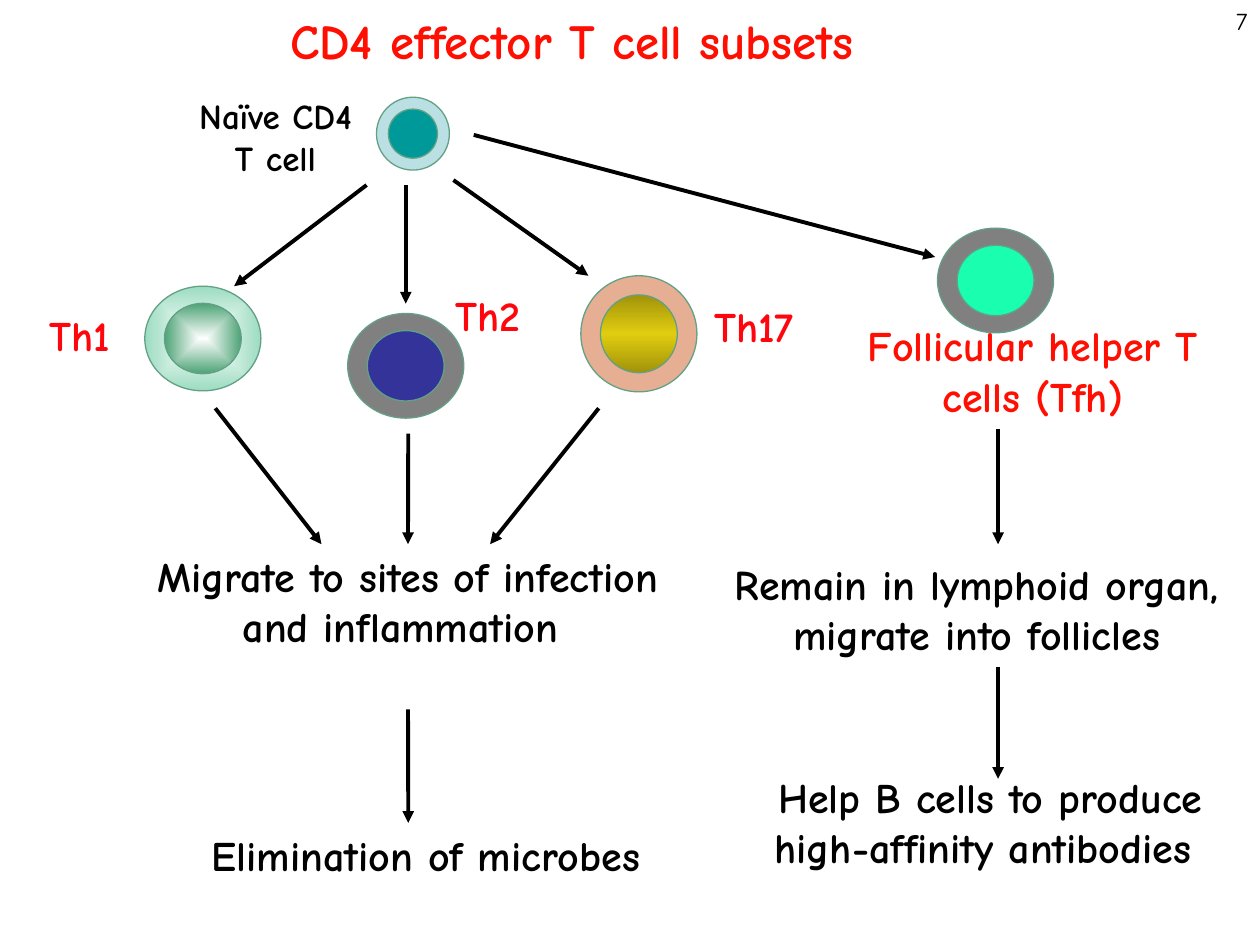
from dataclasses import dataclass
from typing import Optional, Union

from pptx import Presentation
from pptx.dml.color import RGBColor
from pptx.enum.shapes import MSO_CONNECTOR as Connector, MSO_SHAPE as Preset
from pptx.enum.text import MSO_ANCHOR as Anchor, MSO_AUTO_SIZE as AutoSize, PP_ALIGN as Align
from pptx.oxml import parse_xml
from pptx.oxml.ns import nsdecls, qn
from pptx.util import Cm, Pt


@dataclass(frozen=True)
class Theme:
    font: str = "Comic Neue"
    black: str = "000000"
    label_red: str = "FF060F"
    title_red: str = "FF0E02"
    outline: str = "63A186"
    grey: str = "808080"
    title_size: float = 28
    body_size: float = 24
    small_size: float = 20
    number_size: float = 14
    arrow_width: float = 2.25
    outline_width: float = 0.75


@dataclass(frozen=True)
class Gradient:
    stops: tuple
    radial: bool


@dataclass(frozen=True)
class Cell:
    left: float
    top: float
    width: float
    height: float
    inner_width: float
    inner_height: float
    outer_fill: Union[str, Gradient]
    inner_fill: Union[str, Gradient]


@dataclass(frozen=True)
class Label:
    lines: tuple
    left: float
    top: float
    width: float
    height: float
    color: str
    size: float = 24
    align: Align = Align.CENTER
    wrap: bool = True
    bold: bool = True


@dataclass(frozen=True)
class Arrow:
    start: tuple
    end: tuple
    start_label: Optional[str] = None
    end_label: Optional[str] = None


THEME = Theme()

TITLE = Label(("CD4 effector T cell subsets ",), 4.6, 0.08, 14.2, 1.45,
              THEME.title_red, THEME.title_size, wrap=False)

CELLS = (
    Cell(2.92, 5.77, 2.34, 2.11, 1.55, 1.42,
         Gradient(((0, "FFFFFF"), (100, "9CDCC1")), True),
         Gradient(((0, "FFFFFF"), (100, "4DA376")), True)),
    Cell(11.71, 5.56, 2.34, 2.34, 1.55, 1.57, "E6AE92",
         Gradient(((0, "A1930B"), (50, "E1CD0F"), (100, "A1930B")), False)),
    Cell(7.59, 1.96, 1.47, 1.47, 0.99, 0.99, "BBE0E3", "009999"),
    Cell(7.01, 6.32, 2.34, 2.11, 1.55, 1.42, THEME.grey, "333399"),
    Cell(18.9, 4.6, 2.34, 2.11, 1.55, 1.42, THEME.grey, "19FFAF"),
)

LABELS = {
    "number": Label(("7",), 22.71, 0, 2.69, 0.89, THEME.black, THEME.number_size,
                    Align.RIGHT, bold=False),
    "th1": Label(("Th1",), 0.74, 6.12, 2.11, 1.27, THEME.label_red,
                 align=Align.LEFT, wrap=False),
    "th17": Label(("Th17",), 14.15, 5.94, 2.64, 1.27, THEME.label_red,
                  align=Align.LEFT, wrap=False),
    "th2": Label(("Th2",), 8.94, 5.72, 2.13, 1.27, THEME.label_red,
                 align=Align.LEFT, wrap=False),
    "naive": Label(("Naïve CD4", "T cell"), 3.51, 1.78, 4.09, 1.96, THEME.black,
                   THEME.small_size, wrap=False),
    "follicular": Label(("Follicular helper T cells (Tfh)",), 17.2, 6.32, 7.24, 2.31,
                        THEME.title_red),
    "migrate": Label(("Migrate to sites of infection and inflammation ",),
                     2.84, 10.97, 10.77, 3.33, THEME.black),
    "remain": Label(("Remain in lymphoid organ, migrate into follicles",),
                    13.97, 11.13, 11.43, 2.31, THEME.black),
    "help": Label(("Help B cells to produce high-affinity antibodies ",),
                  14.53, 15.42, 10.87, 2.31, THEME.black),
    "eliminate": Label(("Elimination of microbes",), 3.2, 16.59, 10.77, 1.27, THEME.black),
}

ARROWS = (
    Arrow((7.39, 3.73), (4.72, 5.77)),
    Arrow((8.18, 3.73), (8.18, 6.12)),
    Arrow((9.14, 3.63), (11.86, 5.56)),
    Arrow((9.55, 2.72), (18.85, 5.18)),
    Arrow((4.34, 8.23), (6.48, 10.97)),
    Arrow((8.23, 8.74), (8.23, 10.97), end_label="migrate"),
    Arrow((12.07, 8.23), (9.88, 10.97)),
    Arrow((20.12, 8.64), (20.12, 10.97)),
    Arrow((8.23, 14.3), (8.23, 16.59), start_label="migrate"),
    Arrow((20.12, 13.44), (20.12, 15.7)),
)


def apply_fill(shape, fill: Union[str, Gradient]) -> None:
    if isinstance(fill, str):
        shape.fill.solid()
        shape.fill.fore_color.rgb = RGBColor.from_string(fill)
        return
    stops = "".join(f'<a:gs pos="{position * 1000}"><a:srgbClr val="{color}"/></a:gs>'
                    for position, color in fill.stops)
    direction = ('<a:path path="shape"><a:fillToRect l="50000" t="50000" r="50000" b="50000"/></a:path>'
                 if fill.radial else '<a:lin ang="5400000" scaled="1"/>')
    shape.fill.background()
    properties = shape.element.spPr
    properties.replace(properties.find(qn("a:noFill")), parse_xml(
        f'<a:gradFill {nsdecls("a")} rotWithShape="1"><a:gsLst>{stops}</a:gsLst>{direction}</a:gradFill>'))


def draw_cell(slide, cell: Cell) -> None:
    group = slide.shapes.add_group_shape()
    for width, height, fill in ((cell.width, cell.height, cell.outer_fill),
                                (cell.inner_width, cell.inner_height, cell.inner_fill)):
        left = cell.left + (cell.width - width) / 2
        top = cell.top + (cell.height - height) / 2
        shape = group.shapes.add_shape(Preset.OVAL, Cm(left), Cm(top), Cm(width), Cm(height))
        shape.shadow.inherit = False
        apply_fill(shape, fill)
        shape.line.color.rgb = RGBColor.from_string(THEME.outline)
        shape.line.width = Pt(THEME.outline_width)


def write_label(shape, label: Label) -> None:
    shape.left, shape.top = Cm(label.left), Cm(label.top)
    shape.width, shape.height = Cm(label.width), Cm(label.height)
    frame = shape.text_frame
    frame.word_wrap = label.wrap
    frame.auto_size = AutoSize.NONE if label.wrap else AutoSize.SHAPE_TO_FIT_TEXT
    frame.vertical_anchor = Anchor.TOP
    for index, line in enumerate(label.lines):
        paragraph = frame.add_paragraph() if index else frame.paragraphs[0]
        paragraph.alignment = label.align
        run = paragraph.add_run()
        run.text = line
        run.font.name = THEME.font
        run.font.size = Pt(label.size)
        run.font.bold = label.bold
        run.font.color.rgb = RGBColor.from_string(label.color)


def draw_arrow(slide, arrow: Arrow, boxes: dict) -> None:
    ends = [Cm(value) for value in arrow.start + arrow.end]
    connector = slide.shapes.add_connector(Connector.STRAIGHT, *ends)
    if arrow.start_label:
        connector.begin_connect(boxes[arrow.start_label], 2)
    if arrow.end_label:
        connector.end_connect(boxes[arrow.end_label], 0)
    connector.line.color.rgb = RGBColor.from_string(THEME.black)
    connector.line.width = Pt(THEME.arrow_width)
    properties = connector.element.spPr
    properties.find(qn("a:ln")).append(parse_xml(f'<a:tailEnd {nsdecls("a")} type="triangle"/>'))
    properties.append(parse_xml(f'<a:effectLst {nsdecls("a")}/>'))


def main() -> None:
    presentation = Presentation()
    presentation.slide_width, presentation.slide_height = Cm(25.4), Cm(19.05)
    slide = presentation.slides.add_slide(presentation.slide_layouts[5])
    write_label(slide.shapes.title, TITLE)
    for cell in CELLS:
        draw_cell(slide, cell)
    boxes = {}
    for name, label in LABELS.items():
        boxes[name] = slide.shapes.add_textbox(0, 0, 0, 0)
        write_label(boxes[name], label)
    for arrow in ARROWS:
        draw_arrow(slide, arrow, boxes)
    presentation.save("out.pptx")


if __name__ == "__main__":
    main()
